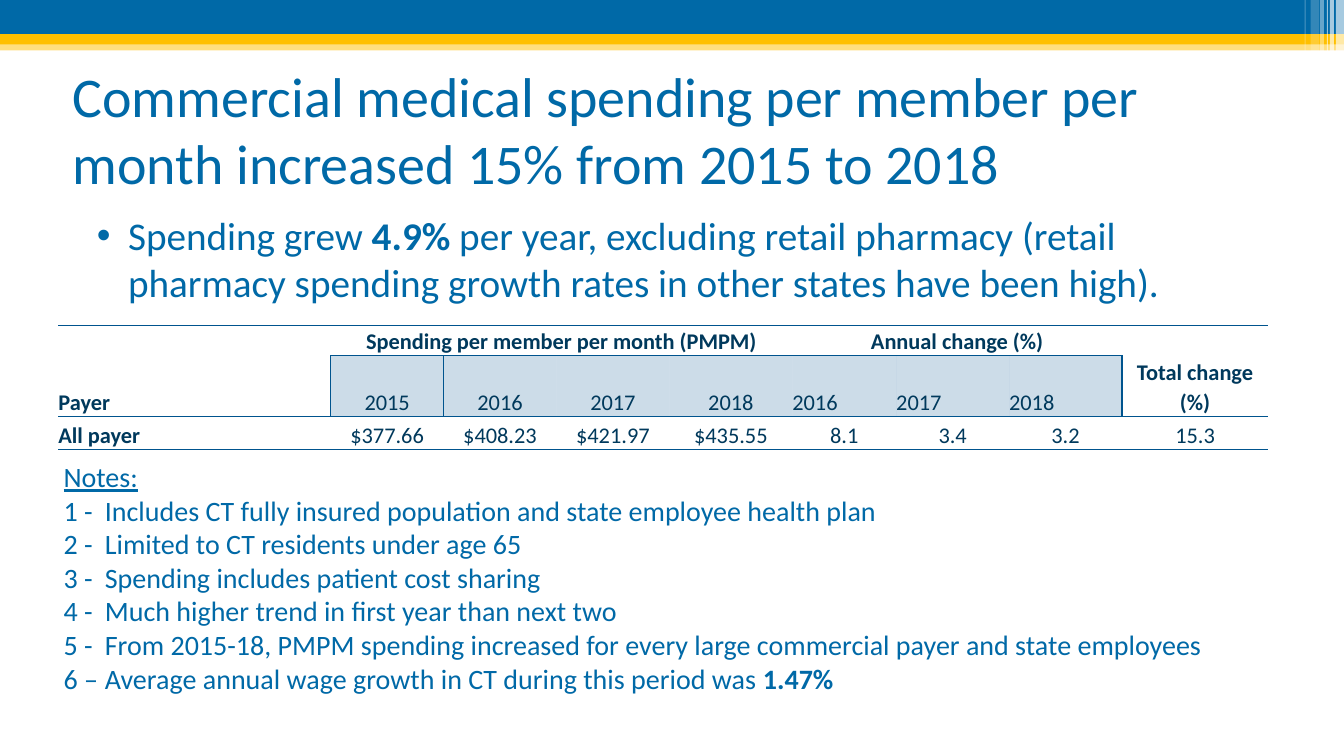
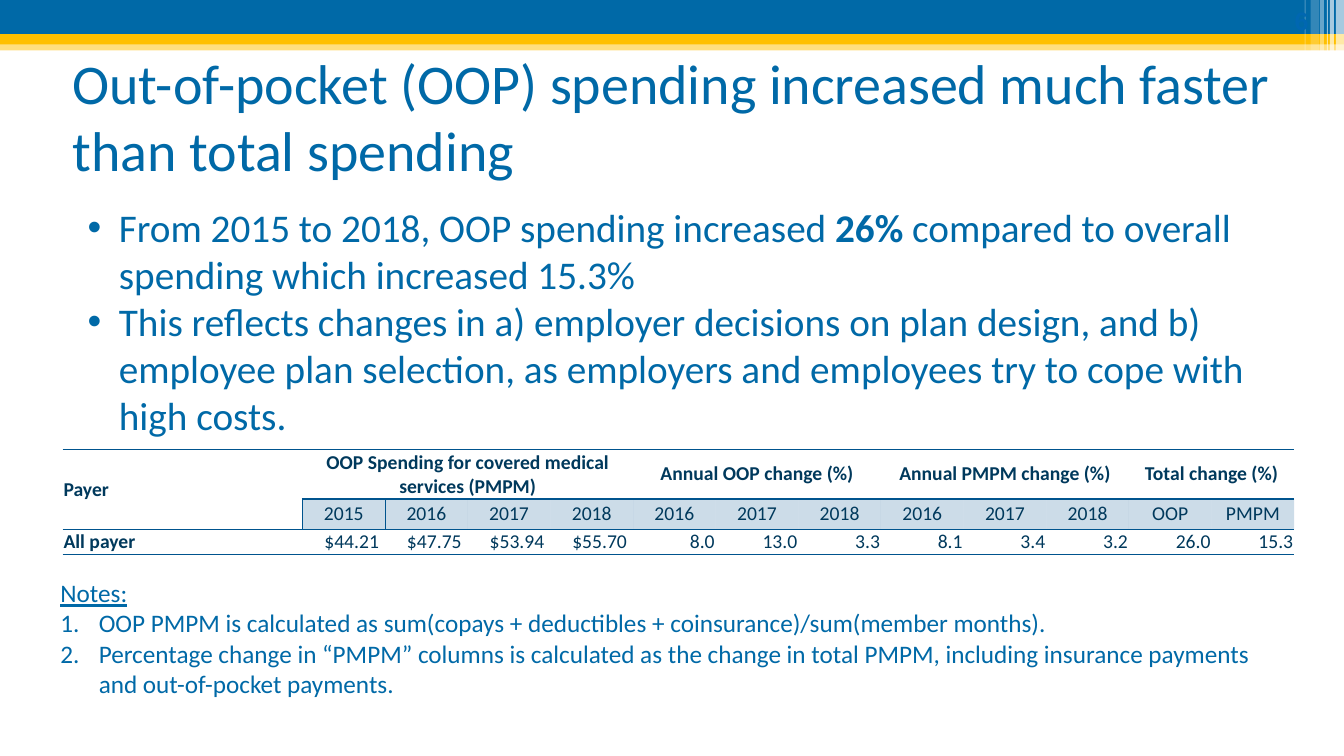
from dataclasses import dataclass
from typing import Optional

from lxml import etree
from pptx import Presentation
from pptx.dml.color import RGBColor
from pptx.enum.shapes import MSO_SHAPE as Shape
from pptx.enum.text import MSO_ANCHOR as Anchor, PP_ALIGN as Align
from pptx.oxml.ns import qn
from pptx.util import Inches, Pt


@dataclass(frozen=True)
class Theme:
    font: str = "Calibri"
    number_font: str = "Arial"
    blue: str = "0069A7"
    number_blue: str = "0067B1"
    gold: str = "FFC000"
    white: str = "FFFFFF"
    table_text: str = "00395C"
    rule: str = "00548E"
    shade_alpha: int = 20
    rule_width: float = 1
    title_size: int = 40
    body_size: int = 28
    number_size: int = 18
    padding: float = 0.05
    no_grid_style: str = "{2D5ABB26-0587-4C30-8999-92F81FD0307C}"


THEME = Theme()


@dataclass(frozen=True)
class TableStyle:
    size: int
    anchor: Anchor
    inset: float
    spacing: float


@dataclass(frozen=True)
class Cell:
    """One table cell; edges holds the letters of its ruled sides (L, R, T, B)."""
    text: str
    rows: int = 1
    cols: int = 1
    align: Align = Align.CENTER
    edges: str = ""
    bold: bool = False
    shaded: bool = False
    right: Optional[float] = None


def add_xml(parent, tag, **attributes):
    return etree.SubElement(parent, qn(tag), **attributes)


def paint(fill, holder, color, alpha=100):
    """Fill solidly; holder is the XML element that carries the fill."""
    fill.solid()
    fill.fore_color.rgb = RGBColor.from_string(color)
    if alpha < 100:
        color_xml = holder.find(qn("a:solidFill"))[0]
        add_xml(color_xml, "a:alpha", val=str(alpha * 1000))


def hang(paragraph, indent, marker):
    """Give a hanging indent; marker is a bullet, 'auto' for 1. 2. or 'tab' for typed labels."""
    props = paragraph._p.get_or_add_pPr()
    props.set("marL", str(Inches(indent)))
    props.set("indent", str(-Inches(indent)))
    if marker == "auto":
        add_xml(props, "a:buAutoNum", type="arabicPeriod")
    elif marker != "tab":
        add_xml(props, "a:buFont", typeface="Arial")
        add_xml(props, "a:buChar", char=marker)


def write_text(frame, lines, size, color=THEME.blue, font=THEME.font, bold=False,
               align=Align.LEFT, spacing=None, heading=None, marker=None, indent=0):
    """Write one paragraph a line, after an underlined heading; **marks** make bold."""
    headings = [heading] if heading else []
    for index, line in enumerate(headings + lines):
        paragraph = frame.paragraphs[0] if index == 0 else frame.add_paragraph()
        is_heading = index < len(headings)
        if marker and not is_heading:
            hang(paragraph, indent, marker)
        paragraph.alignment = align
        if spacing:
            paragraph.line_spacing = spacing
        for part_index, part in enumerate(line.split("**")):
            if not part:
                continue
            run = paragraph.add_run()
            run.text = part
            run.font.name = font
            run.font.size = Pt(size)
            run.font.bold = bold or part_index % 2 == 1
            run.font.underline = is_heading
            run.font.color.rgb = RGBColor.from_string(color)


def add_text(slide, box, lines, size, anchor=Anchor.TOP, wrap=True, **text_format):
    frame = slide.shapes.add_textbox(*map(Inches, box)).text_frame
    frame.word_wrap = wrap
    frame.vertical_anchor = anchor
    frame.margin_left = frame.margin_right = Inches(THEME.padding)
    frame.margin_top = frame.margin_bottom = Inches(THEME.padding)
    write_text(frame, lines, size, **text_format)


def add_band(slide, box, color, alpha=100):
    band = slide.shapes.add_shape(Shape.RECTANGLE, *map(Inches, box))
    band.shadow.inherit = False
    band.line.fill.background()
    paint(band.fill, band._element.spPr, color, alpha)


def add_header_bands(slide, width):
    add_band(slide, (0, 0.4, width, 0.1), THEME.gold, 50)
    add_band(slide, (0, 0, width, 0.34), THEME.blue)
    add_band(slide, (0, 0.34, width, 0.1), THEME.gold)
    stripes = [(0.08, 0.08, 0.68, 65), (0.14, 0.04, 0.68, 65), (0.17, 0.01, 0.68, 60),
               (0.24, 0.04, 0.68, 40), (0.33, 0.08, 0.64, 20), (0.39, 0.01, 0.64, 30)]
    for from_right, stripe_width, height, alpha in stripes:
        add_band(slide, (width - from_right, 0, stripe_width, height), THEME.white, alpha)


def format_cell(target, cell, style):
    target.margin_left = target.margin_top = target.margin_bottom = Inches(style.inset)
    target.margin_right = Inches(style.inset if cell.right is None else cell.right)
    target.vertical_anchor = style.anchor
    props = target._tc.get_or_add_tcPr()
    for side in "LRTB":
        if side in cell.edges:
            line = add_xml(props, f"a:ln{side}", w=str(Pt(THEME.rule_width)))
            add_xml(add_xml(line, "a:solidFill"), "a:srgbClr", val=THEME.rule)
    if cell.shaded:
        paint(target.fill, props, THEME.rule, THEME.shade_alpha)
    else:
        target.fill.background()
    write_text(target.text_frame, [cell.text], style.size, THEME.table_text,
               bold=cell.bold, align=cell.align, spacing=style.spacing)


def add_spending_table(slide, left, top, widths, heights, rows, style):
    """Build a ruled table; None in rows stands for a cell covered by a span."""
    box = map(Inches, (left, top, sum(widths), sum(heights)))
    table = slide.shapes.add_table(len(heights), len(widths), *box).table
    table.first_row = table.horz_banding = False
    table._tbl.tblPr.find(qn("a:tableStyleId")).text = THEME.no_grid_style
    for column, width in zip(table.columns, widths):
        column.width = Inches(width)
    for row, height in zip(table.rows, heights):
        row.height = Inches(height)
    for r, row in enumerate(rows):
        for c, cell in enumerate(row):
            if cell is None:
                continue
            target = table.cell(r, c)
            if cell.rows * cell.cols > 1:
                target.merge(table.cell(r + cell.rows - 1, c + cell.cols - 1))
            format_cell(target, cell, style)


def group_header(text, cols):
    return [Cell(text, cols=cols, edges="TB", bold=True)] + [None] * (cols - 1)


def side_header(text, align=Align.LEFT):
    return Cell(text, rows=2, align=align, edges="TB", bold=True)


def sub_headers(labels, align=Align.CENTER, first_edges="T", last_edges="T"):
    edges = [first_edges] + ["T"] * (len(labels) - 2) + [last_edges]
    return [Cell(label, align=align, edges=edge, shaded=True)
            for label, edge in zip(labels, edges)]


def values(numbers, **cell_format):
    return [Cell(number, edges="B", **cell_format) for number in numbers]


ALL_PAYER = Cell("All payer", align=Align.LEFT, edges="TB", bold=True)
YEARS = ["2015", "2016", "2017", "2018"]


def add_title(slide, text, top):
    add_text(slide, (0.67, top, 12, 1.17), [text], THEME.title_size, anchor=Anchor.MIDDLE)


def add_bullets(slide, box, lines):
    add_text(slide, box, lines, THEME.body_size, marker="•", indent=0.31)


def add_notes(slide, box, lines, size, marker, indent):
    add_text(slide, box, lines, size, heading="Notes:", marker=marker, indent=indent)


def build_commercial_spending(slide):
    add_title(slide, "Commercial medical spending per member per month increased 15% "
                     "from 2015 to 2018", 0.69)
    rows = [
        [side_header("Payer"),
         *group_header("Spending per member per month (PMPM)", 4),
         *group_header("Annual change (%)", 3),
         side_header("Total change (%)", Align.CENTER)],
        [None, *sub_headers(YEARS, first_edges="LT"),
         *sub_headers(YEARS[1:], Align.LEFT, last_edges="RT"), None],
        [ALL_PAYER,
         *values(["$377.66", "$408.23", "$421.97", "$435.55", "8.1", "3.4", "3.2"]),
         Cell("15.3", edges="TB")],
    ]
    widths = [2.7, 1.12, 1.12, 1.12, 1.22, 1.03, 1.12, 1.12, 1.45]
    add_spending_table(slide, 0.58, 3.23, widths, [0.3, 0.6, 0.33], rows,
                       TableStyle(16, Anchor.BOTTOM, 0, 1.1))
    add_notes(slide, (0.58, 4.51, 12.01, 2.37), [
        "1 -\tIncludes CT fully insured population and state employee health plan",
        "2 -\tLimited to CT residents under age 65",
        "3 -\tSpending includes patient cost sharing",
        "4 -\tMuch higher trend in first year than next two",
        "5 -\tFrom 2015-18, PMPM spending increased for every large commercial payer "
        "and state employees",
        "6 –\tAverage annual wage growth in CT during this period was **1.47%**",
    ], 20, "tab", 0.41)
    add_bullets(slide, (0.91, 2.05, 11.52, 1.04), [
        "Spending grew **4.9%** per year, excluding retail pharmacy (retail pharmacy "
        "spending growth rates in other states have been high)."])


def build_out_of_pocket(slide):
    add_title(slide, "Out-of-pocket (OOP) spending increased much faster than total "
                     "spending", 0.56)
    add_text(slide, (12.79, 0.04, 0.24, 0.36), ["6"], THEME.number_size,
             anchor=Anchor.BOTTOM, wrap=False, color=THEME.number_blue,
             font=THEME.number_font, bold=True, align=Align.RIGHT)
    add_notes(slide, (0.55, 5.68, 12.23, 1.32), [
        "OOP PMPM is calculated as sum(copays + deductibles + coinsurance)/sum(member "
        "months).",
        "Percentage change in “PMPM” columns is calculated as the change in total PMPM, "
        "including insurance payments and out-of-pocket payments.",
    ], 18, "auto", 0.38)
    add_bullets(slide, (0.82, 1.97, 11.7, 2.46), [
        "From 2015 to 2018, OOP spending increased **26%** compared to overall spending "
        "which increased 15.3%",
        "This reflects changes in a) employer decisions on plan design, and b) employee "
        "plan selection, as employers and employees try to cope with high costs."])
    rows = [
        [side_header("Payer"),
         *group_header("OOP Spending for covered medical services (PMPM)", 4),
         *group_header("Annual OOP change (%)", 3),
         *group_header("Annual PMPM change (%)", 3),
         *group_header("Total change (%)", 2)],
        [None, *sub_headers(YEARS + YEARS[1:] * 2 + ["OOP", "PMPM"], first_edges="LT")],
        [ALL_PAYER,
         *values(["$44.21", "$47.75", "$53.94", "$55.70"], align=Align.RIGHT, right=0.06),
         *values(["8.0", "13.0", "3.3", "8.1", "3.4", "3.2", "26.0", "15.3"],
                 align=Align.RIGHT)],
    ]
    add_spending_table(slide, 0.62, 4.46, [2.38] + [0.82] * 12, [0.49, 0.3, 0.25], rows,
                       TableStyle(14, Anchor.MIDDLE, 0.01, 1.0))


def main():
    deck = Presentation()
    width = 13.33
    deck.slide_width, deck.slide_height = Inches(width), Inches(7.5)
    for build in (build_commercial_spending, build_out_of_pocket):
        slide = deck.slides.add_slide(deck.slide_layouts[6])
        add_header_bands(slide, width)
        build(slide)
    deck.save("out.pptx")


if __name__ == "__main__":
    main()
